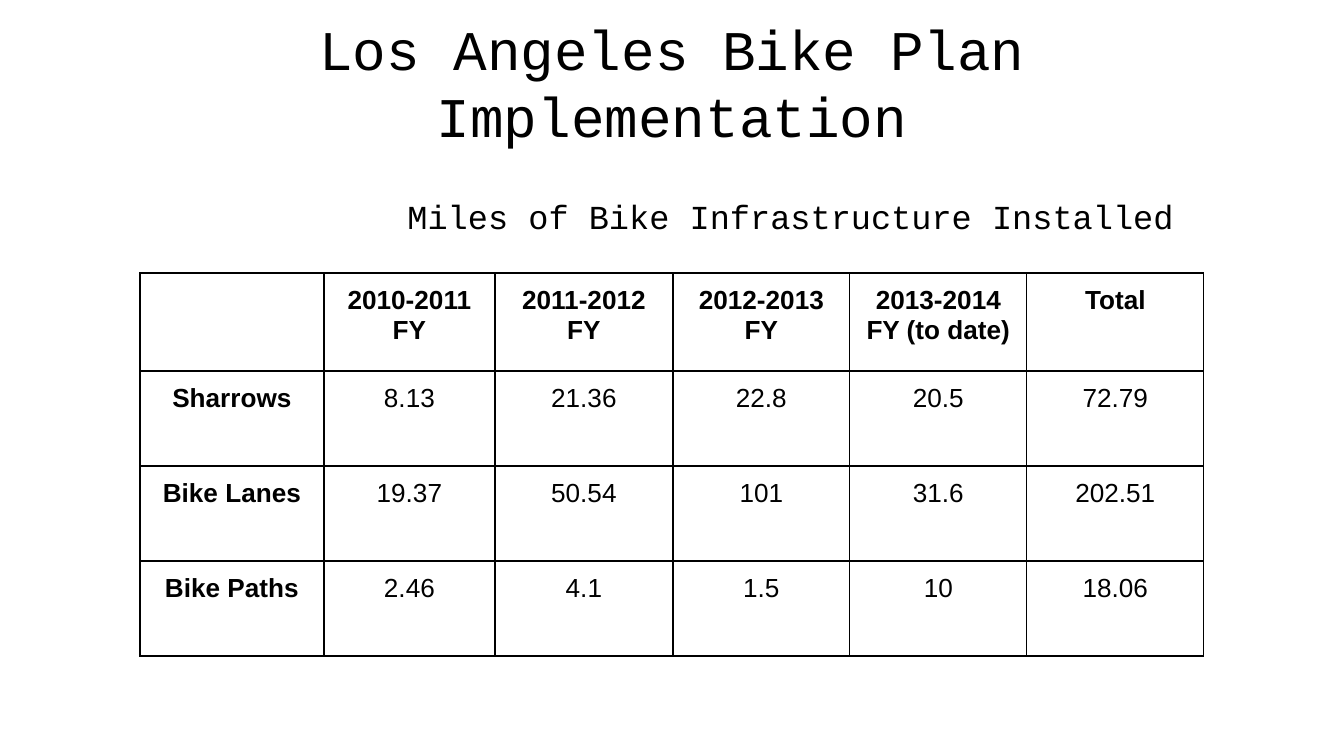
from typing import NamedTuple

from lxml.etree import SubElement
from pptx import Presentation
from pptx.dml.color import RGBColor
from pptx.enum.text import MSO_ANCHOR as Anchor, PP_ALIGN as Align
from pptx.oxml.ns import qn
from pptx.util import Emu, Pt

EMU_PER_PX = 6804  # 134.4 px to the inch
BLACK = RGBColor(0x00, 0x00, 0x00)
TITLE_ONLY = 5
BORDER_WIDTH = Pt(0.75)


class Box(NamedTuple):
    left: int
    top: int
    width: int
    height: int


class Insets(NamedTuple):
    left: int = 13
    top: int = 13
    right: int = 13
    bottom: int = 13


class MileageRow(NamedTuple):
    label: str
    miles: tuple[str, ...]


TITLE_FONT = {"name": "Courier New", "size": Pt(30), "bold": False}
SUBTITLE_FONT = {"name": "Courier New", "size": Pt(18), "bold": False}
HEADER_FONT = {"name": "Arial", "size": Pt(14), "bold": True}
VALUE_FONT = HEADER_FONT | {"bold": False}

COLUMN_WIDTHS = (184, 171, 178, 177, 177, 177)
ROW_HEIGHTS = (98, 95, 95, 95)
HEADERS = ("", "2010-2011 FY", "2011-2012\nFY", "2012-2013 FY",
           "2013-2014 FY (to date)", "Total")
MILEAGE = (
    MileageRow("Sharrows", ("8.13", "21.36", "22.8", "20.5", "72.79")),
    MileageRow("Bike Lanes", ("19.37", "50.54", "101", "31.6", "202.51")),
    MileageRow("Bike Paths", ("2.46", "4.1", "1.5", "10", "18.06")),
)


def px(length: int) -> Emu:
    return Emu(length * EMU_PER_PX)


def set_insets(target, insets: Insets) -> None:
    for side, length in insets._asdict().items():
        setattr(target, f"margin_{side}", px(length))


def write_text(text_frame, text: str, font_format: dict) -> None:
    text_frame.word_wrap = True
    text_frame.text = text
    for paragraph in text_frame.paragraphs:
        paragraph.alignment = Align.CENTER
        for name, value in font_format.items():
            setattr(paragraph.font, name, value)
        paragraph.font.color.rgb = BLACK


def add_borders(cell) -> None:
    properties = cell._tc.get_or_add_tcPr()
    for position, side in enumerate(("lnL", "lnR", "lnT", "lnB")):
        line = SubElement(properties, qn(f"a:{side}"), w=str(BORDER_WIDTH))
        properties.insert(position, line)
        fill = SubElement(line, qn("a:solidFill"))
        SubElement(fill, qn("a:srgbClr"), val=str(BLACK))


def add_title(slide, text: str, box: Box) -> None:
    title = slide.shapes.title
    title.left, title.top, title.width, title.height = map(px, box)
    title.text_frame.vertical_anchor = Anchor.BOTTOM
    set_insets(title.text_frame, Insets(bottom=8))
    write_text(title.text_frame, text, TITLE_FONT)


def add_subtitle(slide, text: str, box: Box) -> None:
    text_frame = slide.shapes.add_textbox(*map(px, box)).text_frame
    set_insets(text_frame, Insets(left=250, top=20))
    write_text(text_frame, text, SUBTITLE_FONT)


def add_mileage_table(slide, left: int, top: int) -> None:
    box = Box(left, top, sum(COLUMN_WIDTHS), sum(ROW_HEIGHTS))
    table = slide.shapes.add_table(
        len(ROW_HEIGHTS), len(COLUMN_WIDTHS), *map(px, box)).table
    table.first_row = table.horz_banding = False
    for column, width in zip(table.columns, COLUMN_WIDTHS):
        column.width = px(width)
    for row, height in zip(table.rows, ROW_HEIGHTS):
        row.height = px(height)

    rows = [HEADERS, *((row.label, *row.miles) for row in MILEAGE)]
    for row_index, texts in enumerate(rows):
        for column_index, text in enumerate(texts):
            cell = table.cell(row_index, column_index)
            is_header = row_index == 0 or column_index == 0
            cell.fill.background()
            set_insets(cell, Insets())
            write_text(cell.text_frame, text,
                       HEADER_FONT if is_header else VALUE_FONT)
            add_borders(cell)


def main() -> None:
    presentation = Presentation()
    presentation.slide_width, presentation.slide_height = px(1344), px(756)
    slide = presentation.slides.add_slide(presentation.slide_layouts[TITLE_ONLY])

    # Headings
    add_title(slide, "Los Angeles Bike Plan Implementation", Box(67, 31, 1210, 126))
    add_subtitle(slide, "Miles of Bike Infrastructure Installed",
                 Box(67, 176, 1210, 547))

    # Miles by fiscal year
    add_mileage_table(slide, left=140, top=273)

    presentation.save("out.pptx")


if __name__ == "__main__":
    main()
